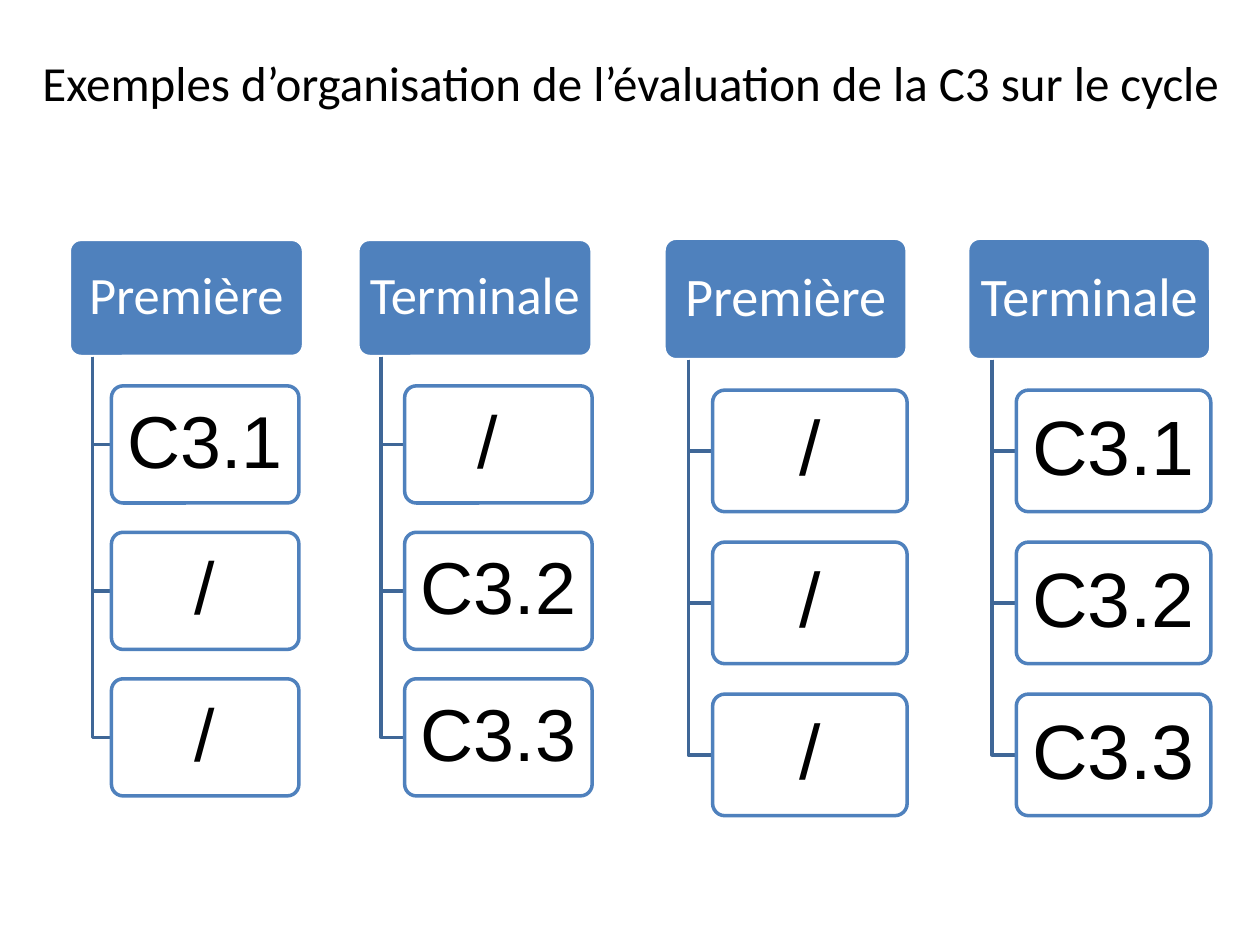
from lxml.etree import SubElement
from pptx import Presentation
from pptx.dml.color import RGBColor
from pptx.enum.shapes import MSO_SHAPE
from pptx.enum.text import MSO_ANCHOR, PP_ALIGN
from pptx.oxml.ns import qn
from pptx.util import Inches, Pt

BLUE, TRUNK, WHITE, BLACK = "4F81BD", "3F6797", "FFFFFF", "000000"
SLIDE_WIDTH, SLIDE_HEIGHT = 10, 7.5
ROW_PITCH = 1.25      # distance between rows, in box heights
CHILD_WIDTH = 0.8     # share of the header width
TRUNK_OFFSET = 0.1    # share of the header width


def color(hex_string):
    return RGBColor.from_string(hex_string)


def write(frame, text, size, font, hex_string):
    paragraph = frame.paragraphs[0]
    paragraph.alignment = PP_ALIGN.CENTER
    run = paragraph.add_run()
    run.text = text
    run.font.size = Pt(size)
    run.font.name = font
    run.font.color.rgb = color(hex_string)
    return paragraph


def add_title(slide, left, top, width, height):
    title = slide.shapes.title
    title.left, title.top = Inches(left), Inches(top)
    title.width, title.height = Inches(width), Inches(height)
    title.text_frame.word_wrap = True
    title.text_frame.vertical_anchor = MSO_ANCHOR.TOP
    write(title.text_frame, "Exemples d’organisation de l’évaluation de la C3 sur le cycle",
          28, "Calibri", BLACK)


def add_box(shapes, box, text, size, font, colors):
    fill, line, ink = colors
    shape = shapes.add_shape(MSO_SHAPE.ROUNDED_RECTANGLE, *map(Inches, box))
    shape.shadow.inherit = False
    shape.adjustments[0] = 0.1
    shape.fill.solid()
    shape.fill.fore_color.rgb = color(fill)
    shape.line.color.rgb = color(line)
    shape.line.width = Pt(2)
    frame = shape.text_frame
    frame.word_wrap = True
    frame.vertical_anchor = MSO_ANCHOR.MIDDLE
    frame.margin_left = frame.margin_right = Inches(0.04)
    frame.margin_top = frame.margin_bottom = Inches(0.04)
    write(frame, text, size, font, ink).line_spacing = 0.9
    return shape


def add_elbow(shapes, x, top, right, bottom):
    builder = shapes.build_freeform(Inches(x), Inches(top))
    builder.add_line_segments([(Inches(x), Inches(bottom)),
                               (Inches(right), Inches(bottom))], close=False)
    elbow = builder.convert_to_shape()
    elbow.shadow.inherit = False
    elbow.fill.background()
    elbow.line.color.rgb = color(TRUNK)
    elbow.line.width = Pt(2)


def add_branch(shapes, box, indent, heading, entries, sizes):
    """Header with its entries hanging below; indent is a share of the header width."""
    left, top, width, height = box
    heading_size, entry_size = sizes
    add_box(shapes, box, heading, heading_size, "Calibri", (BLUE, WHITE, WHITE))
    child_left = left + indent * width
    for row, entry in enumerate(entries, start=1):
        child_top = top + row * ROW_PITCH * height
        add_elbow(shapes, left + TRUNK_OFFSET * width, top + height,
                  child_left, child_top + height / 2)
        child = add_box(shapes, (child_left, child_top, CHILD_WIDTH * width, height),
                        entry, entry_size, "Arial", (WHITE, BLUE, BLACK))
        # Slightly transparent fill
        fill_color = child.fill._xPr.find(qn("a:solidFill"))[0]
        SubElement(fill_color, qn("a:alpha"), val="90000")


def add_hierarchy(slide, left, top, width, pitch, sizes, branches):
    """Branches side by side; every box is half as high as a header is wide."""
    group = slide.shapes.add_group_shape()
    for column, (heading, indent, entries) in enumerate(branches):
        add_branch(group.shapes, (left + column * pitch, top, width, width / 2),
                   indent, heading, entries, sizes)


def main():
    presentation = Presentation()
    presentation.slide_width = Inches(SLIDE_WIDTH)
    presentation.slide_height = Inches(SLIDE_HEIGHT)
    slide = presentation.slides.add_slide(presentation.slide_layouts[5])

    add_title(slide, 0.09, 0.37, 9.83, 0.88)

    # Evaluation spread over both years
    add_hierarchy(slide, 0.55, 1.9, 1.86, 2.29, (30, 42), [
        ("Première", 0.18, ["C3.1", "/", "/"]),
        ("Terminale", 0.2, ["/ ", "C3.2", "C3.3"]),
    ])
    # Evaluation in the final year only
    add_hierarchy(slide, 5.27, 1.89, 1.93, 2.41, (31, 44), [
        ("Première", 0.2, ["/", "/", "/"]),
        ("Terminale", 0.2, ["C3.1", "C3.2", "C3.3"]),
    ])
    presentation.save("out.pptx")


if __name__ == "__main__":
    main()
